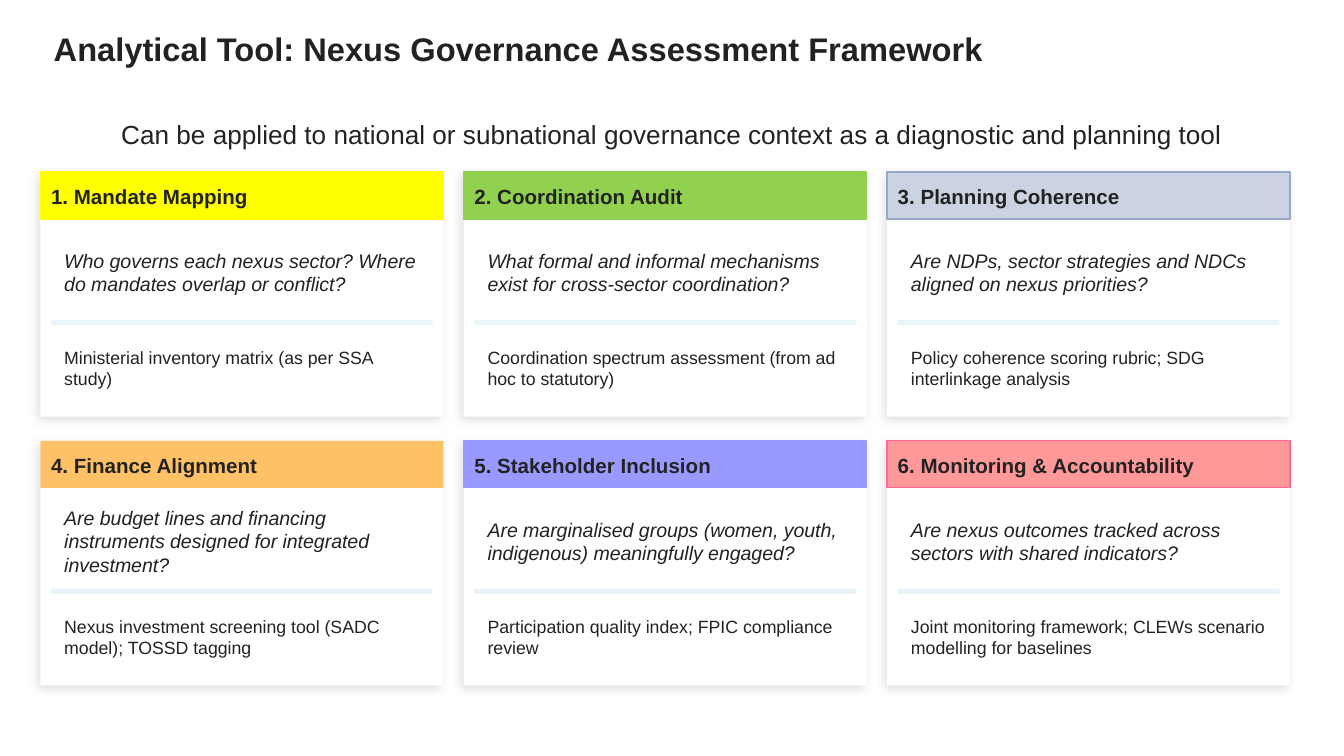
from lxml import etree
from pptx import Presentation
from pptx.dml.color import RGBColor
from pptx.enum.shapes import MSO_SHAPE
from pptx.enum.text import MSO_ANCHOR, PP_ALIGN
from pptx.oxml.ns import qn
from pptx.util import Inches, Pt

RECT = MSO_SHAPE.RECTANGLE
MIDDLE = MSO_ANCHOR.MIDDLE
LEFT, CENTER = PP_ALIGN.LEFT, PP_ALIGN.CENTER
UNIT = Inches(0.1)
COLS, ROWS = 100, 56.25
ACROSS = 3
CARD_W, CARD_H = 30, 18.2
STEP_X, STEP_Y = 31.5, 20
PAD = 0.8

COLORS = {
    "ink": "222222", "card": "FFFFFF", "rule": "E8F4F8", "shade": "000000",
    "yellow": "FFFF00", "green": "92D050", "blue": "CBD3E3", "steel": "96A8C8",
    "orange": "FFC166", "violet": "9999FF", "red": "FF9999", "pink": "FF6699",
}

CARDS = [
    ("Mandate Mapping", "yellow", "yellow",
     "Who governs each nexus sector? Where do mandates overlap or conflict?",
     "Ministerial inventory matrix (as per SSA study)"),
    ("Coordination Audit", "green", "green",
     "What formal and informal mechanisms exist for cross-sector coordination?",
     "Coordination spectrum assessment (from ad hoc to statutory)"),
    ("Planning Coherence", "blue", "steel",
     "Are NDPs, sector strategies and NDCs aligned on nexus priorities?",
     "Policy coherence scoring rubric; SDG interlinkage analysis"),
    ("Finance Alignment", "orange", None,
     "Are budget lines and financing instruments designed for integrated investment?",
     "Nexus investment screening tool (SADC model); TOSSD tagging"),
    ("Stakeholder Inclusion", "violet", "violet",
     "Are marginalised groups (women, youth, indigenous) meaningfully engaged?",
     "Participation quality index; FPIC compliance review"),
    ("Monitoring & Accountability", "red", "pink",
     "Are nexus outcomes tracked across sectors with shared indicators?",
     "Joint monitoring framework; CLEWs scenario modelling for baselines"),
]


def color(name):
    """Return the named colour."""
    return RGBColor.from_string(COLORS[name])


def scale(box):
    """Turn a box in grid units into slide lengths."""
    return [round(part * UNIT) for part in box]


def add_text(slide, box, text, size, bold=False, italic=False, align=LEFT, inset=0):
    """Add one wrapped paragraph, centred vertically in its box."""
    frame = slide.shapes.add_textbox(*scale(box)).text_frame
    frame.word_wrap = True
    frame.vertical_anchor = MIDDLE
    frame.margin_left = frame.margin_right = round(inset * UNIT)
    frame.margin_top = frame.margin_bottom = round(inset * UNIT / 2)
    para = frame.paragraphs[0]
    para.text = text
    para.alignment = align
    font = para.font
    font.name, font.size = "Arial", Pt(size)
    font.bold, font.italic = bold, italic
    font.color.rgb = color("ink")


def add_rect(slide, box, fill, line=None):
    """Add a flat rectangle with an optional outline."""
    shape = slide.shapes.add_shape(RECT, *scale(box))
    shape.shadow.inherit = False
    shape.fill.solid()
    shape.fill.fore_color.rgb = color(fill)
    if line:
        shape.line.color.rgb = color(line)
        shape.line.width = Pt(0.75)
    else:
        shape.line.fill.background()
    return shape


def add_shade(shape):
    """Give a shape a soft outer shadow."""
    effects = shape._element.spPr.find(qn("a:effectLst"))
    outer = etree.SubElement(
        effects, qn("a:outerShdw"), blurRad=str(Pt(6)), dist=str(Pt(2)),
        dir=str(135 * 60000), algn="bl", rotWithShape="0")
    tint = etree.SubElement(outer, qn("a:srgbClr"), val=COLORS["shade"])
    etree.SubElement(tint, qn("a:alpha"), val="12000")


def add_head(slide, box):
    """Add the title and the line below it."""
    left, top, width, height = box
    add_text(slide, (left + 0.5, top, width - 1, 5.2),
             "Analytical Tool: Nexus Governance Assessment Framework", 17.5, bold=True)
    add_text(slide, (left, top + height - 2.8, width, 2.8),
             "Can be applied to national or subnational governance context "
             "as a diagnostic and planning tool", 14, align=CENTER)


def add_card(slide, box, title, fill, line, ask, tool):
    """Add one card with its band, question, rule and tool."""
    left, top, width, height = box
    inner, span = left + PAD, width - 2 * PAD
    add_shade(add_rect(slide, box, "card"))
    add_rect(slide, (left, top, width, 3.5), fill, line)
    add_text(slide, (inner, top + 0.4, span, 2.8), title, 11, bold=True)
    add_text(slide, (inner, top + 4.2, span, 6.5), ask, 10.5, italic=True, inset=1)
    add_rect(slide, (inner, top + 11, span, 0.4), "rule")
    add_text(slide, (inner, top + 11.7, span, height - 12.4), tool, 9.5, inset=1)


def add_cards(slide, left, top):
    """Lay the numbered cards out on a grid."""
    for index, (title, *rest) in enumerate(CARDS):
        row, col = divmod(index, ACROSS)
        box = (left + col * STEP_X, top + row * STEP_Y, CARD_W, CARD_H)
        add_card(slide, box, f"{index + 1}. {title}", *rest)


def main():
    """Build and save the slide."""
    deck = Presentation()
    deck.slide_width, deck.slide_height = scale((COLS, ROWS))
    slide = deck.slides.add_slide(deck.slide_layouts[6])
    add_head(slide, (3.5, 1, 93, 10.4))
    add_cards(slide, 3, 12.8)
    deck.save("out.pptx")


if __name__ == "__main__":
    main()
